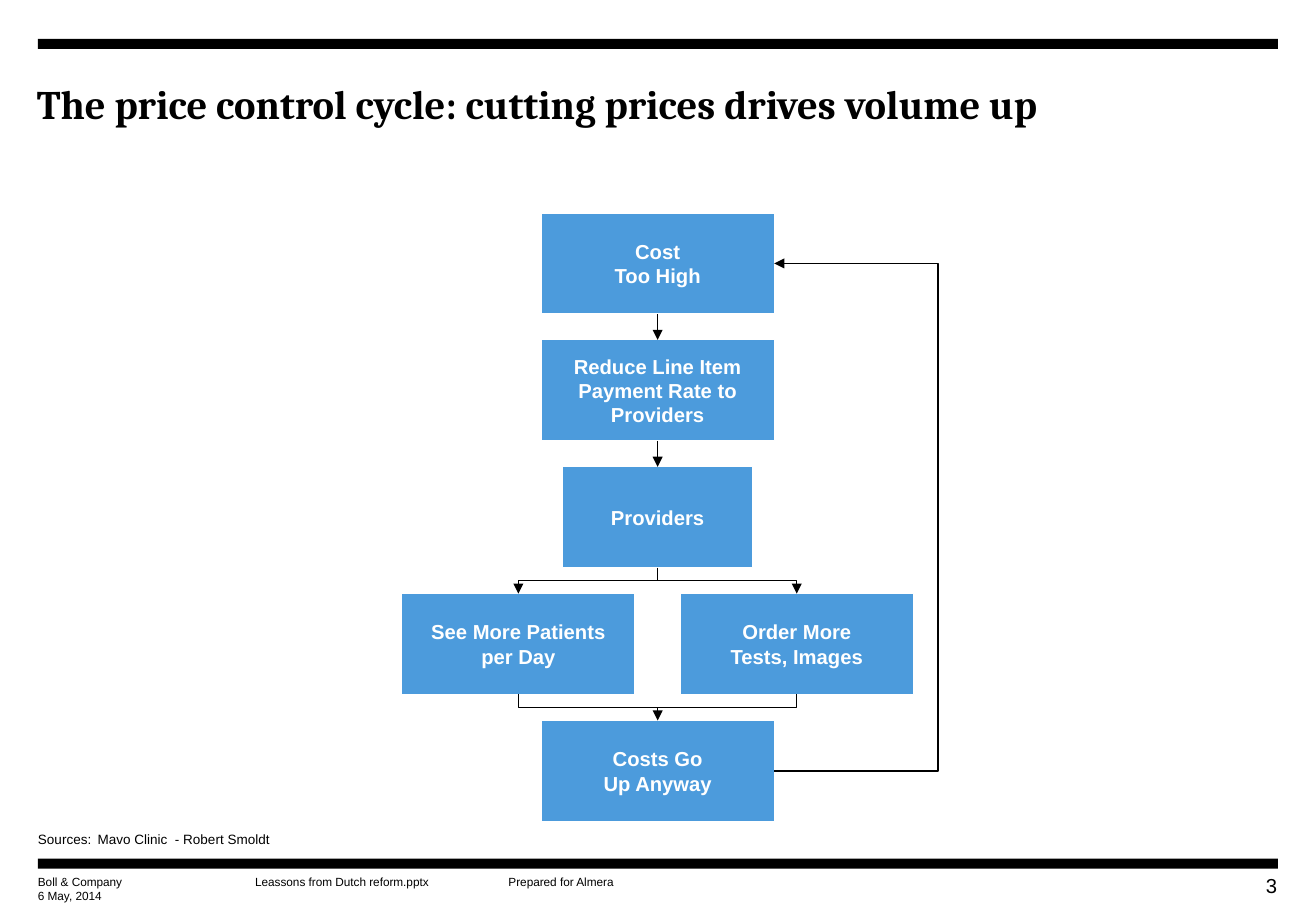
from dataclasses import dataclass

from lxml.etree import SubElement
from pptx import Presentation
from pptx.dml.color import RGBColor
from pptx.enum.shapes import MSO_CONNECTOR, MSO_SHAPE
from pptx.enum.text import MSO_ANCHOR, PP_ALIGN
from pptx.oxml.ns import qn
from pptx.shapes.autoshape import Shape
from pptx.shapes.connector import Connector
from pptx.slide import Slide
from pptx.text.text import TextFrame
from pptx.util import Pt

COLORS = {"ink": "000000", "step": "4C9BDC", "paper": "FFFFFF"}
TOP, LEFT, BOTTOM, RIGHT = range(4)
CENTER_X = 389.8
FIRST_ROW_TOP = 126.3
ROW_PITCH = 75.2
STEP_HEIGHT = 59.8
BRANCH_OFFSET = 82.5
RETURN_X = 556
MARGIN_LEFT = 22.5
CONTENT_WIDTH = 735


@dataclass(frozen=True)
class Step:
    text: str
    row: int
    offset: float = 0
    width: float = 138.2

    @property
    def x(self) -> float:
        return CENTER_X + self.offset

    @property
    def top(self) -> float:
        return FIRST_ROW_TOP + self.row * ROW_PITCH

    @property
    def middle(self) -> float:
        return self.top + STEP_HEIGHT / 2

    @property
    def bottom(self) -> float:
        return self.top + STEP_HEIGHT

    @property
    def right(self) -> float:
        return self.x + self.width / 2


@dataclass(frozen=True)
class Label:
    text: str
    left: float
    top: float
    width: float
    height: float = 8.6
    size: float = 7
    align: PP_ALIGN = PP_ALIGN.LEFT


COST_HIGH = Step("Cost\vToo High", 0)
REDUCE_RATE = Step("Reduce Line Item Payment Rate to Providers", 1)
PROVIDERS = Step("Providers", 2, width=112.3)
MORE_PATIENTS = Step("See More Patients\vper Day", 3, -BRANCH_OFFSET)
MORE_TESTS = Step("Order More\vTests, Images", 3, BRANCH_OFFSET)
COSTS_UP = Step("Costs Go\vUp Anyway", 4)
BRANCHES = (MORE_PATIENTS, MORE_TESTS)
STEPS = (COST_HIGH, REDUCE_RATE, PROVIDERS, *BRANCHES, COSTS_UP)

SOURCES = Label("Sources:\tMavo Clinic  - Robert Smoldt", MARGIN_LEFT, 493.9, CONTENT_WIDTH, size=8)
LABELS = (
    Label("Boll & Company", MARGIN_LEFT, 518.4, 80),
    Label("6 May, 2014", MARGIN_LEFT, 527, 80),
    Label("Leassons from Dutch reform.pptx", 151.2, 518.4, 133.2),
    Label("Prepared for Almera", 301.4, 518.4, 80),
    Label("3", 714.5, 517.7, 42.5, 14.4, 12, PP_ALIGN.RIGHT),
)


def rgb(name: str) -> RGBColor:
    return RGBColor.from_string(COLORS[name])


def format_text(frame: TextFrame, size: float, color: str, align: PP_ALIGN,
                anchor: MSO_ANCHOR, font: str = "Arial", bold: bool = False) -> None:
    frame.margin_left = frame.margin_top = frame.margin_right = frame.margin_bottom = 0
    frame.word_wrap = True
    frame.vertical_anchor = anchor
    for paragraph in frame.paragraphs:
        paragraph.alignment = align
        for run in paragraph.runs:
            run.font.name = font
            run.font.size = Pt(size)
            run.font.bold = bold
            run.font.color.rgb = rgb(color)


def add_block(slide: Slide, left: float, top: float, width: float, height: float, color: str) -> Shape:
    block = slide.shapes.add_shape(MSO_SHAPE.RECTANGLE, Pt(left), Pt(top), Pt(width), Pt(height))
    block.shadow.inherit = False
    block.fill.solid()
    block.fill.fore_color.rgb = rgb(color)
    block.line.fill.background()
    return block


def add_step(slide: Slide, step: Step) -> Shape:
    block = add_block(slide, step.x - step.width / 2, step.top, step.width, STEP_HEIGHT, "step")
    block.line.color.rgb = rgb("paper")
    block.line.width = Pt(0.75)
    block.text_frame.text = step.text
    format_text(block.text_frame, 12, "paper", PP_ALIGN.CENTER, MSO_ANCHOR.MIDDLE, bold=True)
    return block


def add_label(slide: Slide, label: Label, anchor: MSO_ANCHOR = MSO_ANCHOR.TOP) -> Shape:
    box = slide.shapes.add_textbox(Pt(label.left), Pt(label.top), Pt(label.width), Pt(label.height))
    box.text_frame.text = label.text
    format_text(box.text_frame, label.size, "ink", label.align, anchor)
    return box


def add_link(slide: Slide, start: tuple[float, float], end: tuple[float, float],
             arrow: str = "", bent: bool = False) -> Connector:
    kind = MSO_CONNECTOR.ELBOW if bent else MSO_CONNECTOR.STRAIGHT
    link = slide.shapes.add_connector(kind, *(Pt(value) for value in (*start, *end)))
    link.line.color.rgb = rgb("ink")
    link.line.width = Pt(0.75)
    properties = link._element.spPr
    if bent:
        properties.find(qn("a:prstGeom")).set("prst", "bentConnector2")
    if arrow:
        SubElement(properties.find(qn("a:ln")), qn(f"a:{arrow}"), type="triangle")
    SubElement(properties, qn("a:effectLst"))
    return link


def add_title(slide: Slide) -> None:
    title = slide.shapes.title
    title.left, title.top, title.width, title.height = Pt(21.8), Pt(46.8), Pt(CONTENT_WIDTH), Pt(56.2)
    title.text_frame.text = "The price control cycle: cutting prices drives volume up"
    format_text(title.text_frame, 24, "ink", PP_ALIGN.LEFT, MSO_ANCHOR.TOP, "Cambria", True)


def add_sources(slide: Slide) -> None:
    paragraph = add_label(slide, SOURCES, MSO_ANCHOR.BOTTOM).text_frame.paragraphs[0]
    paragraph.line_spacing = 0.9
    tabs = SubElement(paragraph._p.get_or_add_pPr(), qn("a:tabLst"))
    SubElement(tabs, qn("a:tab"), pos=str(Pt(35.3)), algn="l")


def add_cycle(slide: Slide) -> None:
    blocks = {step: add_step(slide, step) for step in STEPS}
    for upper, lower in ((COST_HIGH, REDUCE_RATE), (REDUCE_RATE, PROVIDERS)):
        link = add_link(slide, (CENTER_X, upper.bottom), (CENTER_X, lower.top), "tailEnd")
        link.begin_connect(blocks[upper], BOTTOM)
        link.end_connect(blocks[lower], TOP)

    split = (CENTER_X, (PROVIDERS.bottom + MORE_TESTS.top) / 2)
    merge = (CENTER_X, (MORE_TESTS.bottom + COSTS_UP.top) / 2)
    add_link(slide, (CENTER_X, PROVIDERS.bottom), split).begin_connect(blocks[PROVIDERS], BOTTOM)
    for branch in BRANCHES:
        add_link(slide, split, (branch.x, branch.top), "tailEnd", bent=True)
        add_link(slide, merge, (branch.x, branch.bottom), bent=True)
    add_link(slide, merge, (CENTER_X, COSTS_UP.top), "tailEnd").end_connect(blocks[COSTS_UP], TOP)

    turn = (RETURN_X, (COST_HIGH.middle + COSTS_UP.middle) / 2)
    add_link(slide, (COSTS_UP.right, COSTS_UP.middle), turn, bent=True)
    add_link(slide, (COST_HIGH.right, COST_HIGH.middle), turn, "headEnd", bent=True)


def main() -> None:
    presentation = Presentation()
    presentation.slide_width, presentation.slide_height = Pt(780), Pt(540)
    slide = presentation.slides.add_slide(presentation.slide_layouts[5])
    for bar_top in (23.1, 509):
        add_block(slide, MARGIN_LEFT, bar_top, CONTENT_WIDTH, 5.9, "ink")
    add_title(slide)
    add_cycle(slide)
    for label in LABELS:
        add_label(slide, label)
    add_sources(slide)
    presentation.save("out.pptx")


if __name__ == "__main__":
    main()
